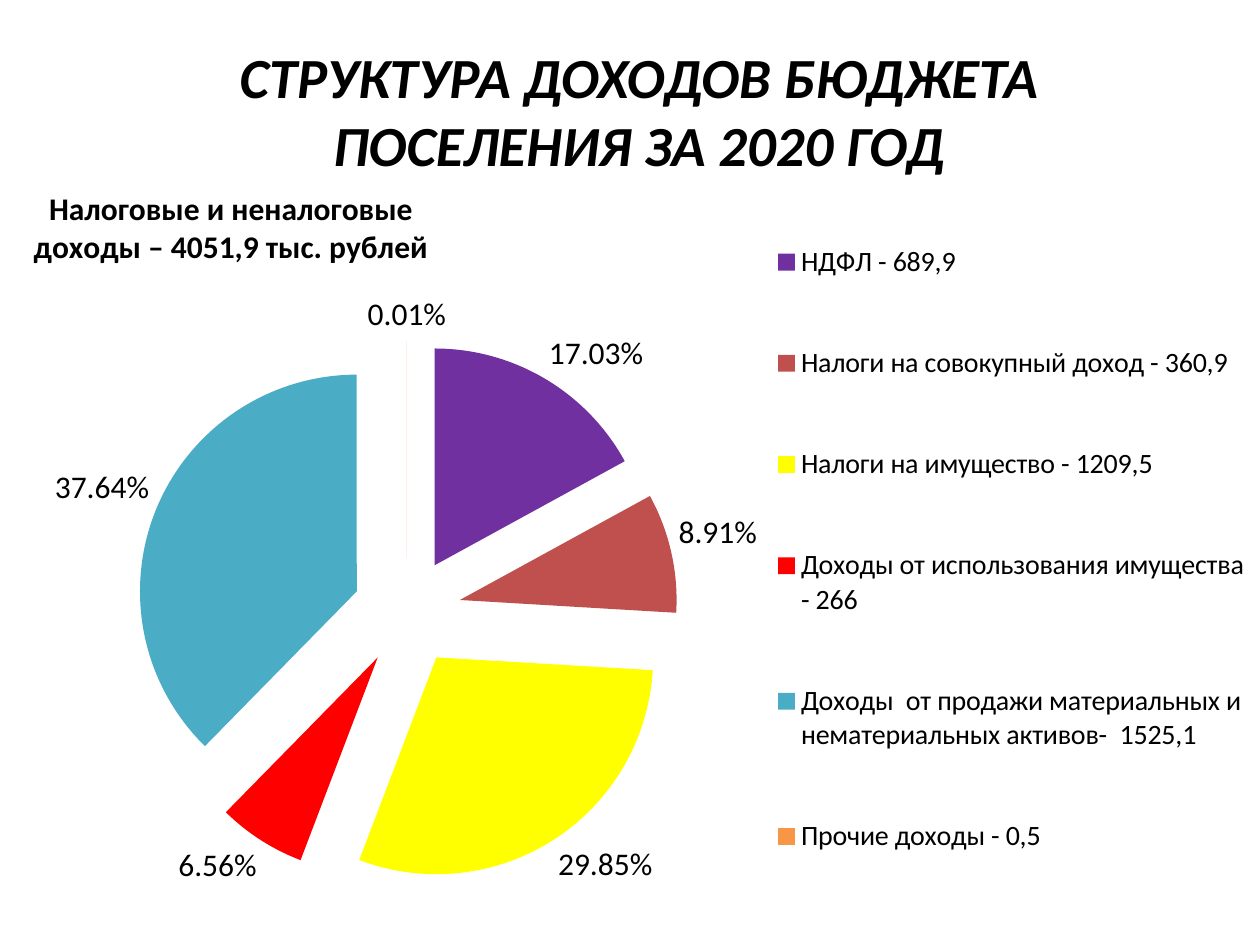
from lxml.etree import SubElement
from pptx import Presentation
from pptx.chart.data import CategoryChartData
from pptx.dml.color import RGBColor
from pptx.enum.chart import XL_CHART_TYPE as ChartType
from pptx.enum.chart import XL_LABEL_POSITION as LabelPosition
from pptx.enum.chart import XL_LEGEND_POSITION as LegendPosition
from pptx.enum.text import MSO_ANCHOR, PP_ALIGN
from pptx.oxml.ns import qn
from pptx.util import Pt

# Content
HEADING = "СТРУКТУРА ДОХОДОВ БЮДЖЕТА ПОСЕЛЕНИЯ ЗА 2020 ГОД"
CHART_TITLE = "Налоговые и неналоговые\nдоходы – 4051,9 тыс. рублей"
INCOME = [
    ("НДФЛ - 689,9", 17.03, "purple"),
    ("Налоги на совокупный доход - 360,9", 8.91, "brick"),
    ("Налоги на имущество - 1209,5", 29.85, "yellow"),
    ("Доходы от использования имущества - 266", 6.56, "red"),
    ("Доходы  от продажи материальных и нематериальных активов-  1525,1", 37.64, "teal"),
    ("Прочие доходы - 0,5", 0.01, "orange"),
]
COLORS = {
    "text": "000000", "purple": "7030A0", "brick": "C0504D", "yellow": "FFFF00",
    "red": "FF0000", "teal": "4BACC6", "orange": "F79646",
}
FONT = "Calibri"
EXPLOSION = 25

# Geometry in px, 126 px to the inch
SCALE = 914400 / 126
PAGE = (1260, 945)
HEADING_BOX = (105, 37, 1068, 145)
CHART_BOX = (0, 168, 1260, 753)
CHART_TITLE_BOX = (30, 184, None, None)
PIE_BOX = (136, 341, 542, 542)
LEGEND_BOX = (785, 178, 475, 743)


def emu(*lengths):
    return [round(length * SCALE) for length in lengths]


def color(name):
    return RGBColor.from_string(COLORS[name])


def style(font, size, bold=False, italic=False):
    font.name, font.size = FONT, Pt(size)
    font.bold, font.italic = bold, italic
    font.color.rgb = color("text")


def place(layout, box, inner=False):
    """Fix a chart part at a px box, given as shares of the chart."""
    left, top, width, height = CHART_BOX
    shares = {"x": (box[0] - left) / width, "y": (box[1] - top) / height}
    if box[2]:
        shares.update(w=box[2] / width, h=box[3] / height)
    for child in list(layout):
        layout.remove(child)
    manual = SubElement(layout, qn("c:manualLayout"))
    if inner:
        SubElement(manual, qn("c:layoutTarget")).set("val", "inner")
    for axis in "xy":
        SubElement(manual, qn(f"c:{axis}Mode")).set("val", "edge")
    for key, share in shares.items():
        SubElement(manual, qn(f"c:{key}")).set("val", f"{share:.4f}")


def layout_of(part, after=None):
    """Return the layout element of a chart part, adding it if missing."""
    layout = part.find(qn("c:layout"))
    if layout is None:
        layout = SubElement(part, qn("c:layout"))
        if after is None:
            part.insert(0, layout)
        else:
            part.find(qn(after)).addnext(layout)
    return layout


deck = Presentation()
deck.slide_width, deck.slide_height = emu(*PAGE)
page = deck.slides.add_slide(deck.slide_layouts[5])

# Heading
heading = page.shapes.title
heading.left, heading.top, heading.width, heading.height = emu(*HEADING_BOX)
frame = heading.text_frame
frame.text = HEADING
frame.word_wrap = True
frame.vertical_anchor = MSO_ANCHOR.MIDDLE
para = frame.paragraphs[0]
para.alignment = PP_ALIGN.CENTER
style(para.font, 32.4, bold=True, italic=True)

# Income pie
data = CategoryChartData()
data.categories = [label for label, _, _ in INCOME]
data.add_series("Series 1", [share for _, share, _ in INCOME])
chart = page.shapes.add_chart(ChartType.PIE, *emu(*CHART_BOX), data).chart
style(chart.font, 18)
plot = chart.plots[0]
plot.vary_by_categories = True
series = plot.series[0]
for index, (_, _, name) in enumerate(INCOME):
    fill = series.points[index].format.fill
    fill.solid()
    fill.fore_color.rgb = color(name)
explosion = SubElement(series._element, qn("c:explosion"))
explosion.set("val", str(EXPLOSION))
series._element.find(qn("c:dPt")).addprevious(explosion)

# Percent labels
plot.has_data_labels = True
labels = plot.data_labels
labels.show_percentage = True
labels.show_value = False
labels.number_format = "0.00%"
labels.number_format_is_linked = False
labels.position = LabelPosition.OUTSIDE_END
style(labels.font, 18)

# Chart title
chart.has_title = True
title = chart.chart_title
title.include_in_layout = False
title.text_frame.text = CHART_TITLE
for para in title.text_frame.paragraphs:
    para.alignment = PP_ALIGN.CENTER
    style(para.font, 18, bold=True)

# Legend
chart.has_legend = True
legend = chart.legend
legend.position = LegendPosition.RIGHT
legend.include_in_layout = False
style(legend.font, 16)

# Fixed places of the chart parts
plot_area = chart._chartSpace.chart.plotArea
place(layout_of(title._element, after="c:tx"), CHART_TITLE_BOX)
place(layout_of(plot_area), PIE_BOX, inner=True)
place(layout_of(legend._element, after="c:legendPos"), LEGEND_BOX)

deck.save("out.pptx")
